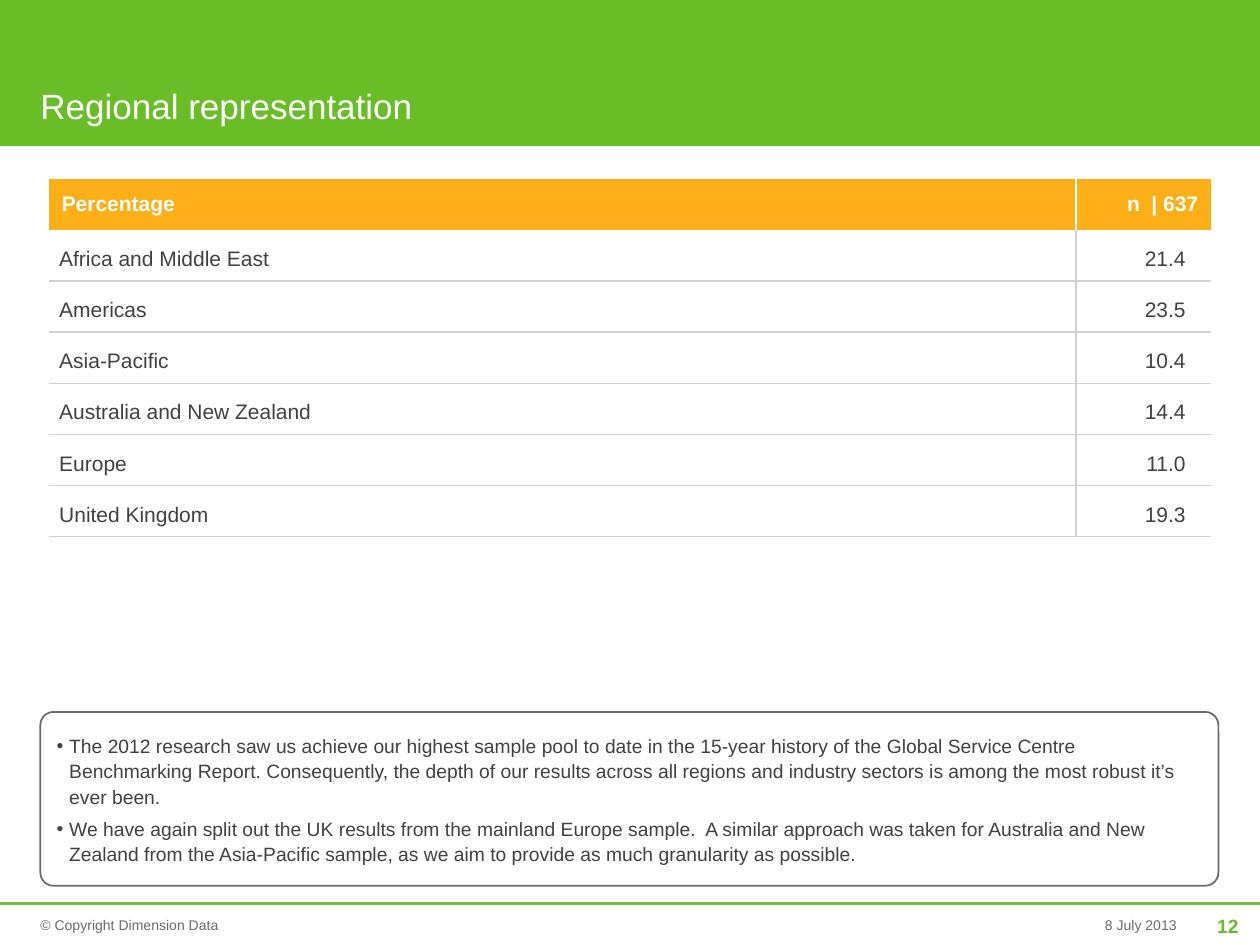
from lxml import etree
from pptx import Presentation
from pptx.dml.color import RGBColor
from pptx.enum.shapes import MSO_CONNECTOR, MSO_SHAPE
from pptx.enum.text import MSO_ANCHOR, PP_ALIGN
from pptx.oxml.ns import qn
from pptx.util import Inches, Pt

LEFT, RIGHT = PP_ALIGN.LEFT, PP_ALIGN.RIGHT
MIDDLE, BOTTOM = MSO_ANCHOR.MIDDLE, MSO_ANCHOR.BOTTOM
GREEN, RULE_GREEN, ORANGE, WHITE = "69BE28", "72BF44", "FCAF17", "FFFFFF"
INK, GREY, PALE = "414141", "6A6A6A", "D1D1D1"

TITLE = "Regional representation"
HEADINGS = ("Percentage", "n  | 637")
REGIONS = [
    ("Africa and Middle East", "21.4"),
    ("Americas", "23.5"),
    ("Asia-Pacific", "10.4"),
    ("Australia and New Zealand", "14.4"),
    ("Europe", "11.0"),
    ("United Kingdom", "19.3"),
]
FINDINGS = [
    "The 2012 research saw us achieve our highest sample pool to date in the 15-year history of the "
    "Global Service Centre Benchmarking Report. Consequently, the depth of our results across all "
    "regions and industry sectors is among the most robust it’s ever been.",
    "We have again split out the UK results from the mainland Europe sample.  A similar approach was "
    "taken for Australia and New Zealand from the Asia-Pacific sample, as we aim to provide as much "
    "granularity as possible.",
]
FOOTERS = [
    ("© Copyright Dimension Data", (0.32, 7.17, 4.68, 0.33), LEFT, 8, GREY, False),
    ("8 July 2013", (7.5, 7.17, 1.84, 0.33), RIGHT, 8, GREY, False),
    ("12", (9.42, 7.17, 0.41, 0.34), RIGHT, 11, GREEN, True),
]
TABLE_BOX = (0.39, 1.42, 9.22, 2.84)
COLUMN_WIDTHS = (8.15, 1.07)
BODY_MARGINS = ((0.08, 0.04, 0, 0.08), (0, 0.04, 0.2, 0.08))


def rgb(color):
    """Turn a hex string into a colour."""
    return RGBColor.from_string(color)


def inches(values):
    """Turn numbers into lengths."""
    return [Inches(value) for value in values]


def style(paragraph, size, color, bold=False, align=LEFT, spacing=None):
    """Format a paragraph and its runs."""
    paragraph.alignment = align
    if spacing:
        paragraph.line_spacing = spacing
    for run in paragraph.runs:
        run.font.name, run.font.size, run.font.bold = "Arial", Pt(size), bold
        run.font.color.rgb = rgb(color)


def set_margins(owner, margins):
    """Set left, top, right and bottom margins."""
    (owner.margin_left, owner.margin_top,
     owner.margin_right, owner.margin_bottom) = inches(margins)


def add_text(slide, text, box, anchor, size, color, bold=False, align=LEFT, spacing=1.1):
    """Add a text box without margins."""
    frame = slide.shapes.add_textbox(*inches(box)).text_frame
    frame.word_wrap = True
    frame.vertical_anchor = anchor
    set_margins(frame, (0, 0, 0, 0))
    frame.text = text
    style(frame.paragraphs[0], size, color, bold, align, spacing)


def set_borders(cell, borders):
    """Draw or clear the given sides of a cell, in L, R, T, B order."""
    properties = cell._tc.get_or_add_tcPr()
    for position, (side, color) in enumerate(borders):
        line = etree.Element(qn(f"a:ln{side}"), w=str(Pt(1) if color else 0))
        if color:
            fill = etree.SubElement(line, qn("a:solidFill"))
            etree.SubElement(fill, qn("a:srgbClr"), val=color)
        else:
            etree.SubElement(line, qn("a:noFill"))
        properties.insert(position, line)


def add_region_table(slide):
    """Add the table of regional shares."""
    rows = [HEADINGS, *REGIONS]
    table = slide.shapes.add_table(len(rows), 2, *inches(TABLE_BOX)).table
    table.first_row = table.horz_banding = False
    for column, width in zip(table.columns, COLUMN_WIDTHS):
        column.width = Inches(width)
    for row_index, row in enumerate(rows):
        table.rows[row_index].height = Inches(TABLE_BOX[3] / len(rows))
        heading = row_index == 0
        for column_index, text in enumerate(row):
            cell = table.cell(row_index, column_index)
            cell.text = text
            cell.fill.solid()
            cell.fill.fore_color.rgb = rgb(ORANGE if heading else WHITE)
            cell.vertical_anchor = MIDDLE if heading else BOTTOM
            if not heading:
                set_margins(cell, BODY_MARGINS[column_index])
            style(cell.text_frame.paragraphs[0], 12, WHITE if heading else INK,
                  heading, RIGHT if column_index else LEFT)
            inner = WHITE if heading else PALE
            set_borders(cell, [
                ("L", inner if column_index else None),
                ("R", None if column_index else inner),
                ("T", PALE if row_index > 1 else None),
                ("B", None if heading else PALE),
            ])


def add_findings(slide):
    """Add the rounded panel of bulleted findings."""
    panel = slide.shapes.add_shape(MSO_SHAPE.ROUNDED_RECTANGLE, *inches((0.32, 5.65, 9.35, 1.38)))
    panel.shadow.inherit = False
    panel.adjustments[0] = 0.076
    panel.fill.solid()
    panel.fill.fore_color.rgb = rgb(WHITE)
    panel.line.color.rgb = rgb(GREY)
    panel.line.width = Pt(1)
    frame = panel.text_frame
    frame.word_wrap = True
    frame.vertical_anchor = MIDDLE
    frame.text = "\n".join(FINDINGS)
    for index, paragraph in enumerate(frame.paragraphs):
        properties = paragraph._p.get_or_add_pPr()
        properties.set("marL", str(Inches(0.1)))
        properties.set("indent", str(Inches(-0.1)))
        etree.SubElement(properties, qn("a:buFont"), typeface="Arial")
        etree.SubElement(properties, qn("a:buChar"), char="•")
        style(paragraph, 11, INK, spacing=1.1)
        paragraph.space_before = Pt(2 if index else 0)
        paragraph.space_after = Pt(2)


def main():
    """Build the slide and save it."""
    deck = Presentation()
    deck.slide_width, deck.slide_height = inches((10, 7.5))
    slide = deck.slides.add_slide(deck.slide_layouts[6])

    for text, box, align, size, color, bold in FOOTERS:
        add_text(slide, text, box, MIDDLE, size, color, bold, align)

    banner = slide.shapes.add_shape(MSO_SHAPE.RECTANGLE, *inches((0, 0, 10, 1.16)))
    banner.shadow.inherit = False
    banner.fill.solid()
    banner.fill.fore_color.rgb = rgb(GREEN)
    banner.line.fill.background()

    footer_rule = slide.shapes.add_connector(MSO_CONNECTOR.STRAIGHT, *inches((0, 7.17, 10, 7.17)))
    footer_rule.line.color.rgb = rgb(RULE_GREEN)
    footer_rule.line.width = Pt(1.5)
    etree.SubElement(footer_rule._element.spPr, qn("a:effectLst"))

    add_text(slide, TITLE, (0.32, 0.09, 7.01, 0.91), BOTTOM, 20, WHITE, spacing=1.2)
    add_region_table(slide)
    add_findings(slide)
    deck.save("out.pptx")


if __name__ == "__main__":
    main()
